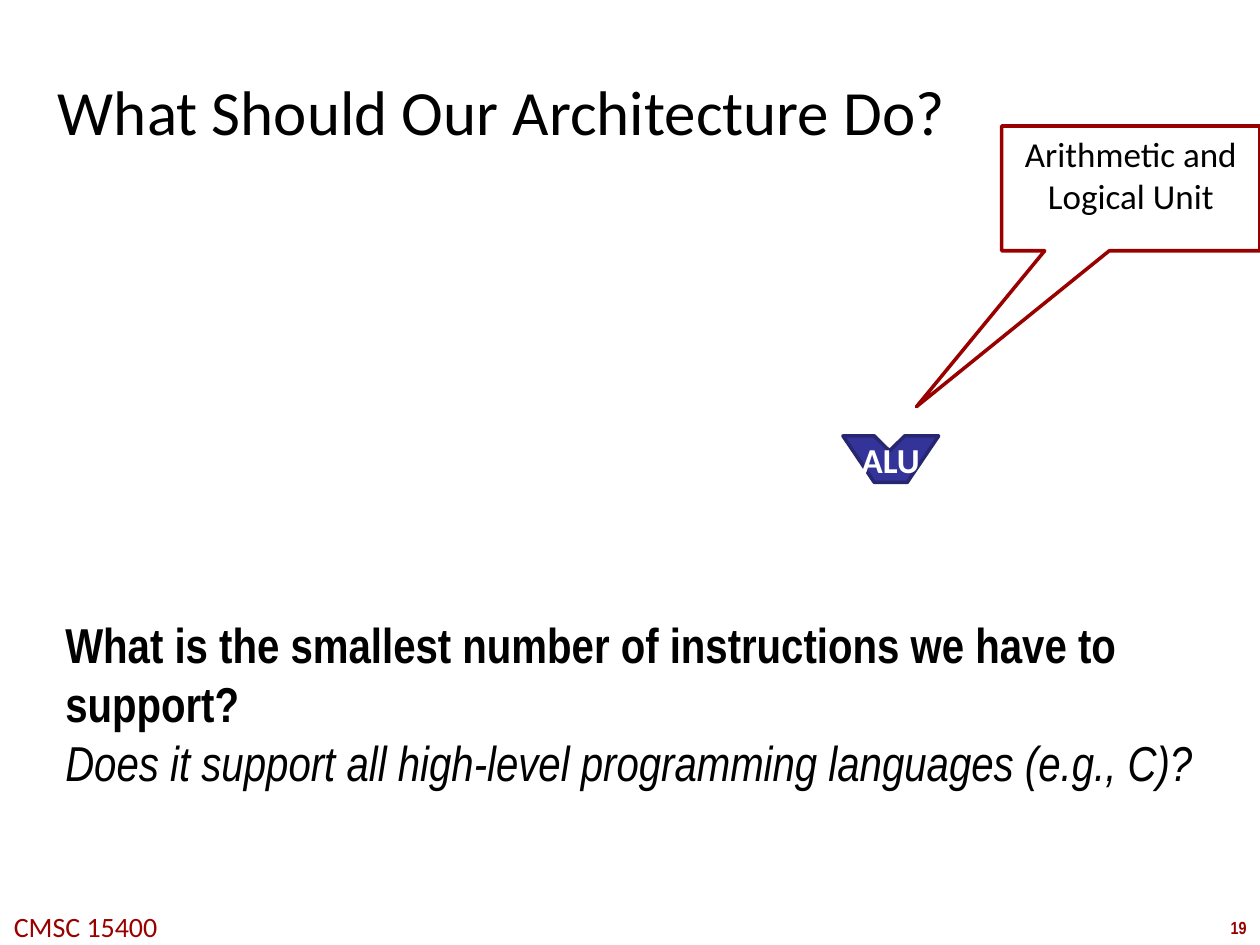
from dataclasses import dataclass
from typing import Any

from pptx import Presentation
from pptx import util as u
from pptx.dml.color import RGBColor
from pptx.enum import shapes, text

BLACK = RGBColor(0x00, 0x00, 0x00)
WHITE = RGBColor(0xFF, 0xFF, 0xFF)
MAROON = RGBColor(0x99, 0x00, 0x00)
INDIGO = RGBColor(0x33, 0x33, 0x99)
DARK_INDIGO = RGBColor(0x26, 0x26, 0x71)

LEFT, CENTER = text.PP_ALIGN.LEFT, text.PP_ALIGN.CENTER
TOP, MIDDLE = text.MSO_ANCHOR.TOP, text.MSO_ANCHOR.MIDDLE


@dataclass
class SlideBuilder:
    slide: Any
    heading_font: str = "Calibri"
    body_font: str = "Arial Narrow"
    outline_width: float = 2

    def set_text(self, frame, lines, size, color, font, align=LEFT, anchor=TOP, wrap=True):
        frame.word_wrap = wrap
        frame.vertical_anchor = anchor
        for index, (line, bold, italic) in enumerate(lines):
            paragraph = frame.add_paragraph() if index else frame.paragraphs[0]
            paragraph.text = line
            paragraph.alignment = align
            paragraph.font.name = font
            paragraph.font.size = u.Pt(size)
            paragraph.font.bold = bold
            paragraph.font.italic = italic
            paragraph.font.color.rgb = color

    def text_box(self, bounds, lines, size, color, font, margin=None, grow=True, **layout):
        frame = self.slide.shapes.add_textbox(*map(u.Inches, bounds)).text_frame
        if margin is not None:
            frame.margin_left = frame.margin_right = u.Inches(margin)
            frame.margin_top = frame.margin_bottom = u.Inches(margin)
        self.set_text(frame, lines, size, color, font, **layout)
        if grow:
            frame.auto_size = text.MSO_AUTO_SIZE.SHAPE_TO_FIT_TEXT

    def paint(self, shape, fill, outline):
        shape.shadow.inherit = False
        shape.fill.solid()
        shape.fill.fore_color.rgb = fill
        shape.line.color.rgb = outline
        shape.line.width = u.Pt(self.outline_width)

    def polygon(self, points, label, fill, outline):
        start, *others = [(u.Inches(x), u.Inches(y)) for x, y in points]
        builder = self.slide.shapes.build_freeform(*start)
        builder.add_line_segments(others, close=True)
        unit = builder.convert_to_shape()
        self.paint(unit, fill, outline)
        self.set_text(unit.text_frame, [(label, True, False)], 20, WHITE,
                      self.heading_font, CENTER, MIDDLE)

    def callout(self, bounds, pointer, label):
        bubble = self.slide.shapes.add_shape(
            shapes.MSO_SHAPE.RECTANGULAR_CALLOUT, *map(u.Inches, bounds))
        bubble.adjustments[0], bubble.adjustments[1] = pointer
        self.paint(bubble, WHITE, MAROON)
        self.set_text(bubble.text_frame, [(label, False, False)], 20, BLACK,
                      self.heading_font, CENTER)


def main():
    deck = Presentation()
    deck.slide_width, deck.slide_height = u.Inches(10), u.Inches(7.5)
    page = SlideBuilder(deck.slides.add_slide(deck.slide_layouts[6]))

    page.text_box((9.66, 7.23, 0.34, 0.27), [("19", True, False)], 10, MAROON,
                  page.body_font, align=CENTER, wrap=False)
    page.text_box((-0.03, 7.17, 1.42, 0.37), [("CMSC 15400", False, False)], 16, MAROON,
                  page.heading_font, align=CENTER, wrap=False)
    page.text_box((0.42, 0.28, 9.17, 1.19),
                  [("What Should Our Architecture Do?", False, False)], 36, BLACK,
                  page.heading_font, margin=0.04, grow=False, anchor=MIDDLE)

    alu_outline = [(6.69, 3.46), (6.94, 3.83), (7.2, 3.83), (7.45, 3.46),
                   (7.18, 3.46), (7.06, 3.58), (6.94, 3.46)]
    page.polygon(alu_outline, "ALU", INDIGO, DARK_INDIGO)

    questions = [
        ("What is the smallest number of instructions we have to support?", True, False),
        ("Does it support all high-level programming languages (e.g., C)?", False, True),
    ]
    page.text_box((0.42, 4.83, 9.42, 1.51), questions, 28, BLACK, page.body_font)
    page.callout((7.95, 1, 2.05, 0.99), (-0.83, 1.75), "Arithmetic and Logical Unit")

    deck.save("out.pptx")


if __name__ == "__main__":
    main()
